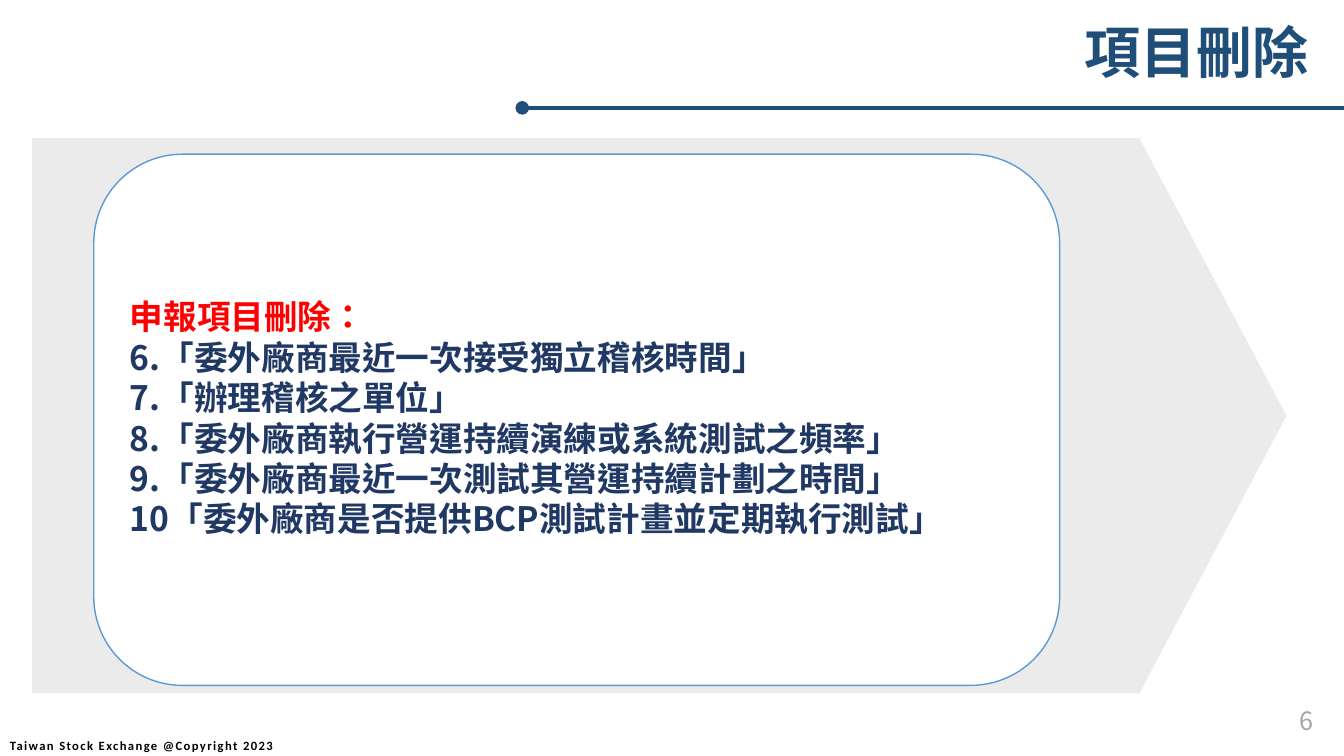
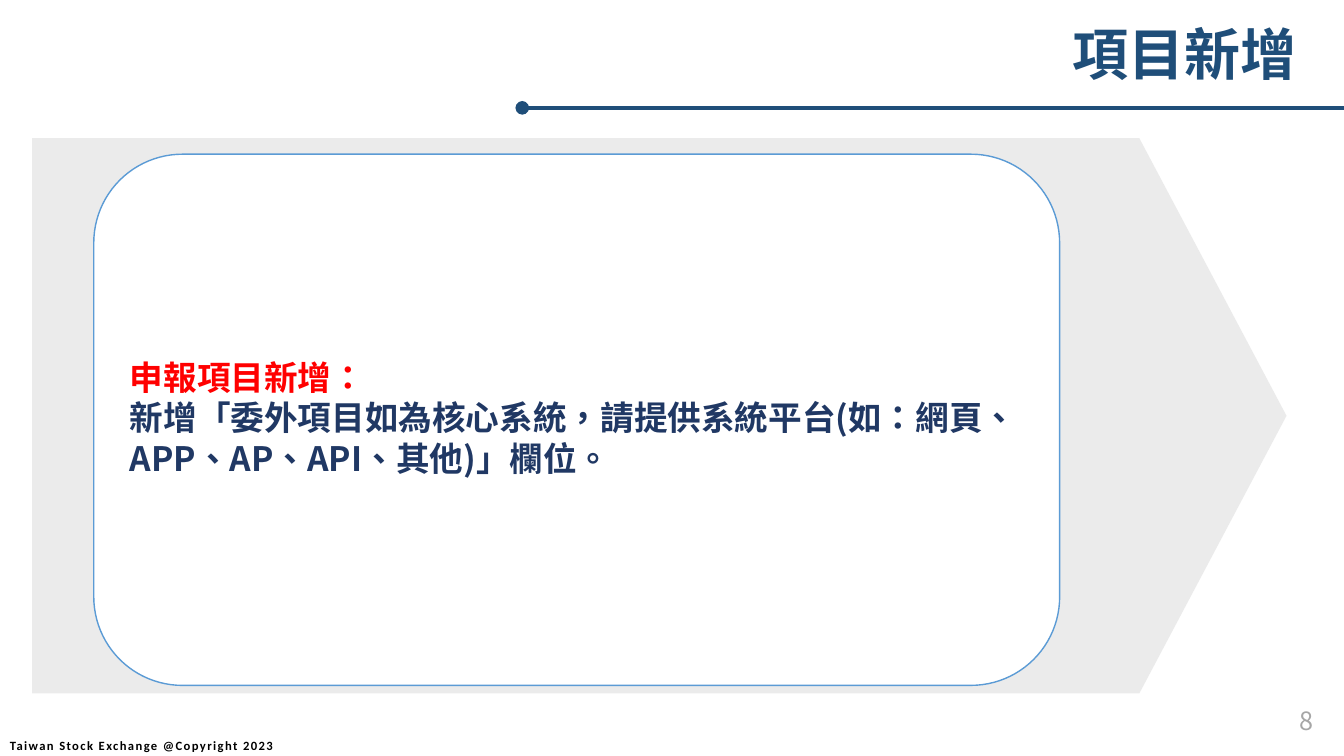
from pptx import Presentation
from pptx.dml.color import RGBColor
from pptx.enum.shapes import MSO_CONNECTOR as Link, MSO_SHAPE as Shape
from pptx.enum.text import MSO_ANCHOR as Anchor, PP_ALIGN as Align
from pptx.oxml.ns import qn
from pptx.util import Inches, Pt
from lxml.etree import SubElement

NAVY = RGBColor(0x1F, 0x4E, 0x79)
INK = RGBColor(0x20, 0x38, 0x64)
RED = RGBColor(0xFF, 0x00, 0x00)
BLUE = RGBColor(0x5B, 0x9B, 0xD5)
GREY = RGBColor(0xD9, 0xD9, 0xD9)
PALE = RGBColor(0xA6, 0xA6, 0xA6)
WHITE = RGBColor(0xFF, 0xFF, 0xFF)
BLACK = RGBColor(0x00, 0x00, 0x00)
CJK = "Noto Sans CJK SC"
LATIN = "Calibri"

WIDE, HIGH = 13.33, 7.5
PANEL = (0.32, 1.37, 12.44, 5.51)

PAGES = [
    ("項目刪除", (10.66, 0.12), 6, [
        "申報項目刪除：",
        "6.「委外廠商最近一次接受獨立稽核時間」",
        "7.「辦理稽核之單位」",
        "8.「委外廠商執行營運持續演練或系統測試之頻率」",
        "9.「委外廠商最近一次測試其營運持續計劃之時間」",
        "10「委外廠商是否提供BCP測試計畫並定期執行測試」",
    ]),
    ("項目新增", (10.54, 0.14), 8, [
        "申報項目新增：",
        "新增「委外項目如為核心系統，請提供系統平台(如：網頁、",
        "APP、AP、API、其他)」欄位。",
    ]),
]


def style(para, size, color, bold=False, face=CJK):
    """Format the runs, setting the East Asian face and language too."""
    for run in para.runs:
        font = run.font
        font.name, font.size, font.bold = face, Pt(size), bold
        font.color.rgb = color
        props = run._r.get_or_add_rPr()
        if face == CJK:
            props.set("lang", "zh-TW")
            props.set("altLang", "en-US")
            SubElement(props, qn("a:ea")).set("typeface", face)


def add_text(slide, box, lines, anchor=Anchor.MIDDLE):
    frame = slide.shapes.add_textbox(*map(Inches, box)).text_frame
    frame.word_wrap = True
    frame.vertical_anchor = anchor
    frame.text = "\n".join(lines)
    return frame.paragraphs


def add_block(slide, kind, box, fill, adjust):
    block = slide.shapes.add_shape(kind, *map(Inches, box))
    block.shadow.inherit = False
    block.adjustments[0] = adjust
    block.fill.solid()
    block.fill.fore_color.rgb = fill
    block.line.fill.background()
    return block


def add_head(slide, title, spot):
    """Title with the dotted rule below, which runs to the slide edge."""
    para = add_text(slide, (*spot, 2.49, 0.77), [title], Anchor.TOP)[0]
    style(para, 40, NAVY, bold=True)
    y = Inches(1.07)
    rule = slide.shapes.add_connector(
        Link.STRAIGHT, Inches(5.18), y, Inches(WIDE), y)
    rule.line.color.rgb = NAVY
    rule.line.width = Pt(3.25)
    SubElement(rule.line._get_or_add_ln(), qn("a:headEnd")).set("type", "oval")
    SubElement(rule._element.spPr, qn("a:effectLst"))


def add_panel(slide, box, lines):
    """Arrow with a white card; the first line is the red heading."""
    left, top, width, height = box
    arrow = add_block(slide, Shape.PENTAGON, box, GREY, 0.265)
    tint = arrow.fill._xPr.find(qn("a:solidFill"))[0]
    SubElement(tint, qn("a:alpha")).set("val", "50000")

    card = (left + 0.61, top + 0.16, width - 2.86, height - 0.24)
    edge = add_block(slide, Shape.ROUNDED_RECTANGLE, card, WHITE, 0.167).line
    edge.color.rgb = BLUE
    edge.width = Pt(1)

    pad = 0.26
    inner = (card[0] + pad, card[1] + pad, card[2] - 2 * pad, card[3] - 2 * pad)
    for i, para in enumerate(add_text(slide, inner, lines)):
        props = para._p.get_or_add_pPr()
        props.set("marL", str(Inches(0.29)))
        props.set("indent", str(Inches(-0.29)))
        para.line_spacing = 0.9
        para.space_after = Pt(3)
        style(para, 24, INK if i else RED, bold=True)


def add_foot(slide, number):
    note = add_text(slide, (0, HIGH - 0.25, 3, 0.3),
                    ["Taiwan Stock Exchange @Copyright 2023"])[0]
    style(note, 9, BLACK, bold=True, face=LATIN)
    note.runs[0]._r.get_or_add_rPr().set("spc", "100")
    page = add_text(slide, (WIDE - 3.2, HIGH - 0.55, 3, 0.4), [str(number)])[0]
    page.alignment = Align.RIGHT
    style(page, 18, PALE)


def main():
    deck = Presentation()
    deck.slide_width, deck.slide_height = Inches(WIDE), Inches(HIGH)
    for title, spot, number, lines in PAGES:
        slide = deck.slides.add_slide(deck.slide_layouts[6])
        add_head(slide, title, spot)
        add_panel(slide, PANEL, lines)
        add_foot(slide, number)
    deck.save("out.pptx")


if __name__ == "__main__":
    main()
